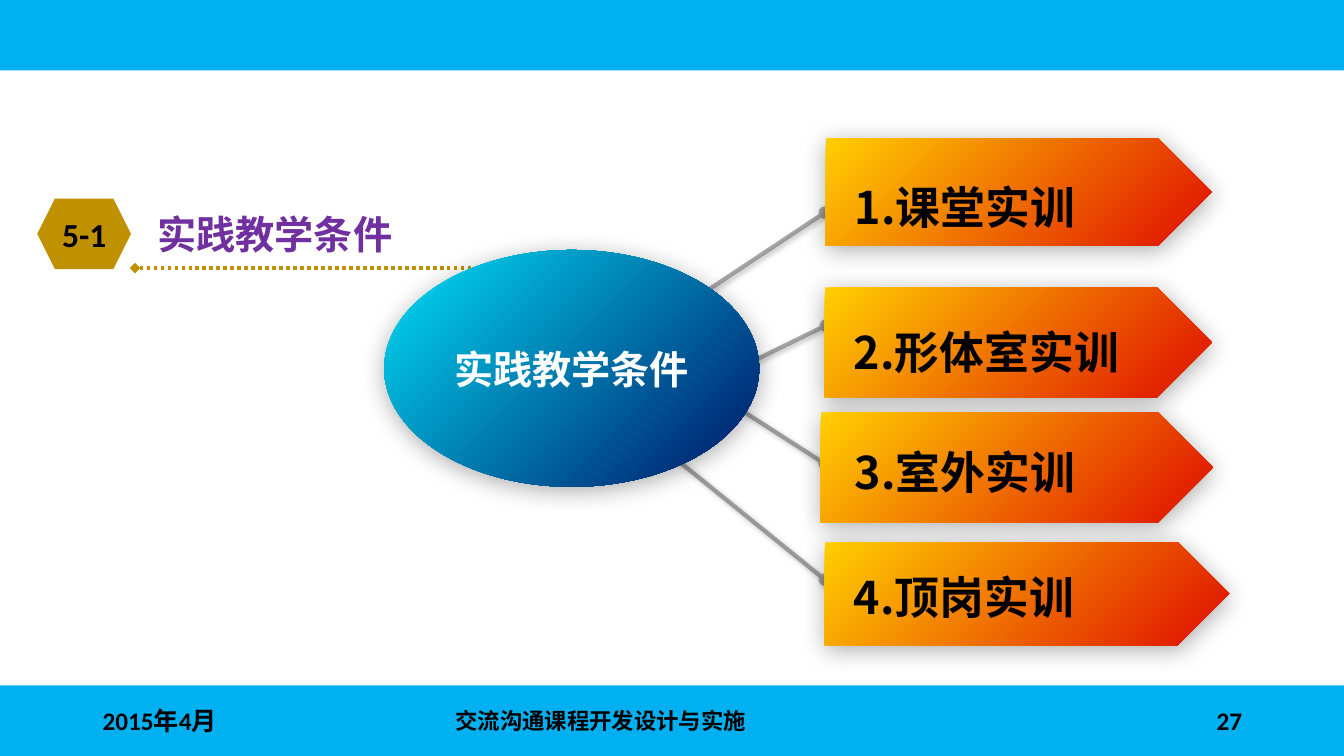
"""Build the slide on practical teaching conditions."""
from dataclasses import dataclass

from lxml import etree
from pptx import Presentation
from pptx import util as u
from pptx.dml import color
from pptx.enum import dml, shapes, text
from pptx.oxml import ns

COLORS = {
    "blue": "00B0F0", "gold": "BF9000", "purple": "7030A0", "black": "000000",
    "white": "FFFFFF", "grey": "595959", "yellow": "FFCF01", "red": "E22000",
    "cyan": "00DFF6", "navy": "002774",
}
CJK = "Noto Sans CJK SC"
LATIN = "Calibri"


@dataclass(frozen=True)
class Box:
    """Position and size in inches."""
    left: float
    top: float
    width: float
    height: float

    def emu(self) -> tuple:
        """Return the four lengths for python-pptx."""
        return tuple(u.Inches(v) for v in (self.left, self.top, self.width, self.height))


@dataclass(frozen=True)
class Style:
    """Look of one line of text."""
    size: int
    font: str = CJK
    color: str = "black"
    align: str = "LEFT"
    anchor: str = "TOP"
    wrap: bool = True


@dataclass(frozen=True)
class Shadow:
    """Outer shadow: opacity in percent, blur and distance in points, angle in degrees."""
    alpha: int
    blur: float
    distance: float
    angle: int


@dataclass(frozen=True)
class Line:
    """Straight line with a marker at both ends."""
    start: tuple
    end: tuple
    color: str
    width: float
    marker: str


@dataclass(frozen=True)
class Training:
    """Arrow plate, its label and the label's place."""
    plate: Box
    label: str
    label_box: Box


PLATE_SHADOW = Shadow(33, 17.8, 3, 87)
SPOKE_SHADOW = Shadow(50, 4, 2, 45)
LABEL = Style(32)
TRAININGS = [
    Training(Box(8.19, 1.37, 3.83, 1.07), "1.课堂实训", Box(8.38, 1.73, 3.09, 0.57)),
    Training(Box(8.18, 2.85, 3.84, 1.09), "2.形体室实训", Box(8.37, 3.17, 3.09, 0.57)),
    Training(Box(8.14, 4.09, 3.89, 1.09), "3.室外实训", Box(8.38, 4.36, 3.09, 0.57)),
    Training(Box(8.18, 5.38, 4.01, 1.02), "4.顶岗实训", Box(8.37, 5.6, 3.83, 0.57)),
]
SPOKES = [
    Line(start, end, "grey", 3, "oval")
    for start, end in [
        ((6.49, 3.23), (8.18, 2.11)), ((7.33, 3.65), (8.19, 3.23)),
        ((7.15, 3.94), (8.18, 4.6)), ((6.49, 4.38), (8.18, 5.75)),
    ]
]
FOOTER = [
    (Box(0.92, 6.95, 3, 0.4), "2015年4月", Style(18, LATIN, anchor="MIDDLE")),
    (Box(4.42, 6.95, 4.5, 0.4), "交流沟通课程开发设计与实施", Style(16, LATIN, anchor="MIDDLE")),
    (Box(9.42, 6.95, 3, 0.4), "27", Style(18, LATIN, align="RIGHT", anchor="MIDDLE")),
]


def rgb(name: str) -> color.RGBColor:
    """Look up a named colour."""
    return color.RGBColor.from_string(COLORS[name])


def add_node(parent, tag: str, **values):
    """Append a DrawingML element with attributes."""
    return etree.SubElement(parent, ns.qn(f"a:{tag}"), {k: str(v) for k, v in values.items()})


def write(shape, words: str, style: Style) -> None:
    """Fill a shape with one formatted line."""
    frame = shape.text_frame
    layout = {
        "word_wrap": style.wrap,
        "auto_size": text.MSO_AUTO_SIZE.NONE,
        "vertical_anchor": text.MSO_ANCHOR[style.anchor],
    }
    for name, value in layout.items():
        setattr(frame, name, value)
    para = frame.paragraphs[0]
    para.alignment = text.PP_ALIGN[style.align]
    span = para.add_run()
    span.text = words
    look = {"name": style.font, "size": u.Pt(style.size), "bold": True}
    for name, value in look.items():
        setattr(span.font, name, value)
    span.font.color.rgb = rgb(style.color)
    add_node(span.font._element, "ea", typeface=CJK)


def cast_shadow(effects, shadow: Shadow) -> None:
    """Add an outer shadow to an effect list."""
    outer = add_node(effects, "outerShdw", blurRad=u.Pt(shadow.blur), dist=u.Pt(shadow.distance),
                     dir=shadow.angle * 60000, algn="ctr", rotWithShape=0)
    add_node(add_node(outer, "srgbClr", val=COLORS["black"]), "alpha", val=shadow.alpha * 1000)


def add_shape(page, kind, box: Box, *fills: str):
    """Draw a flat shape, or a shadowed gradient one when two fills are given."""
    shape = page.shapes.add_shape(kind, *box.emu())
    shape.line.fill.background()
    shape.shadow.inherit = False
    if len(fills) == 1:
        shape.fill.solid()
        shape.fill.fore_color.rgb = rgb(fills[0])
        return shape
    shape.fill.gradient()
    shape.fill.gradient_angle = 315
    for stop, name, position in zip(shape.fill.gradient_stops, fills, (0, 0.9)):
        stop.color.rgb = rgb(name)
        stop.position = position
    cast_shadow(shape._element.spPr.find(ns.qn("a:effectLst")), PLATE_SHADOW)
    return shape


def add_line(page, line: Line):
    """Draw a line with end markers and return it with its effect list."""
    points = [u.Inches(v) for v in (*line.start, *line.end)]
    link = page.shapes.add_connector(shapes.MSO_CONNECTOR.STRAIGHT, *points)
    link.line.color.rgb = rgb(line.color)
    link.line.width = u.Pt(line.width)
    if line.marker == "diamond":
        link.line.dash_style = dml.MSO_LINE.ROUND_DOT
    stroke = link.line._get_or_add_ln()
    for end in ("headEnd", "tailEnd"):
        add_node(stroke, end, type=line.marker)
    return link, add_node(link._element.spPr, "effectLst")


def add_label(page, box: Box, words: str, style: Style) -> None:
    """Place a text box."""
    write(page.shapes.add_textbox(*box.emu()), words, style)


def main() -> None:
    """Compose and save the deck."""
    deck = Presentation()
    deck.slide_width, deck.slide_height = u.Inches(13.33), u.Inches(7.5)
    page = deck.slides.add_slide(deck.slide_layouts[5])
    kinds = shapes.MSO_SHAPE

    title = page.shapes.title
    for name, value in zip(("left", "top", "width", "height"), Box(1.46, 2.04, 2.75, 0.57).emu()):
        setattr(title, name, value)
    write(title, "实践教学条件", Style(28, color="purple", wrap=False))

    badge = add_shape(page, kinds.HEXAGON, Box(0.37, 1.97, 0.93, 0.7), "gold")
    write(badge, "5-1", Style(24, LATIN, align="CENTER", anchor="MIDDLE", wrap=False))
    add_line(page, Line((1.34, 2.66), (4.95, 2.66), "gold", 2.5, "diamond"))

    for spoke in SPOKES:
        link, effects = add_line(page, spoke)
        stroke_color = link.line._get_or_add_ln().find(".//" + ns.qn("a:srgbClr"))
        add_node(stroke_color, "alpha", val=50000)
        cast_shadow(effects, SPOKE_SHADOW)

    hub = add_shape(page, kinds.OVAL, Box(3.81, 2.48, 3.72, 2.35), "cyan", "navy")
    write(hub, "实践教学条件", Style(28, color="white", align="CENTER", anchor="MIDDLE", wrap=False))
    for training in TRAININGS:
        add_shape(page, kinds.PENTAGON, training.plate, "yellow", "red")
        add_label(page, training.label_box, training.label, LABEL)

    for top in (0, 6.8):
        add_shape(page, kinds.RECTANGLE, Box(0, top, 13.33, 0.7), "blue")
    for box, words, style in FOOTER:
        add_label(page, box, words, style)
    deck.save("out.pptx")


if __name__ == "__main__":
    main()
